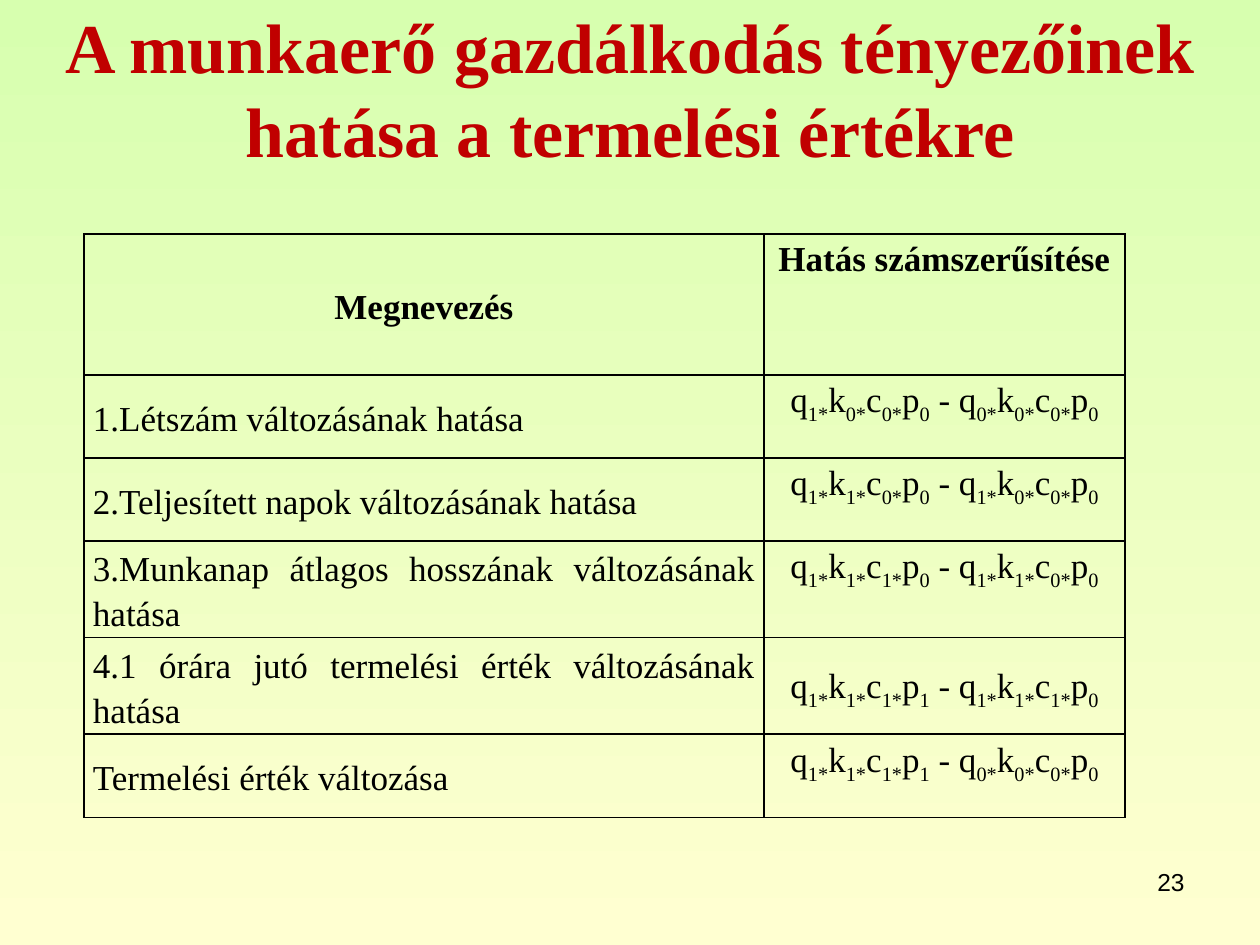
import dataclasses

import pptx
import pptx.dml.color
import pptx.enum.text
import pptx.oxml
import pptx.oxml.ns
import pptx.util

PX = 914400 / 126
SERIF, SANS = "Times New Roman", "Arial"
BLACK, RED = "000000", "C00000"
ALIGN = pptx.enum.text.PP_ALIGN
ANCHOR = pptx.enum.text.MSO_ANCHOR
COLUMN_WIDTHS = (680, 361)
HEADER_HEIGHT, ROW_HEIGHT = 141, 83
CELL_MARGIN = 9


@dataclasses.dataclass(frozen=True)
class Effect:
    """A factor with the 0/1 period indices of q, k, c, p in both products."""
    name: str
    minuend: str
    subtrahend: str
    formula_anchor: ANCHOR = ANCHOR.TOP
    bottom_line: float = 1


EFFECTS = (
    Effect("1.Létszám változásának hatása", "1000", "0000"),
    Effect("2.Teljesített napok változásának hatása", "1100", "1000"),
    Effect("3.Munkanap átlagos hosszának változásának hatása", "1110", "1100"),
    Effect("4.1 órára jutó termelési érték változásának hatása", "1111", "1110",
           ANCHOR.MIDDLE, 1.5),
    Effect("Termelési érték változása", "1111", "0000"),
)


def px(n: int) -> pptx.util.Emu:
    return pptx.util.Emu(round(n * PX))


def rgb(value: str) -> pptx.dml.color.RGBColor:
    return pptx.dml.color.RGBColor.from_string(value)


def add_run(p, text: str, *, size: int = 20, font: str = SERIF, color: str = BLACK,
            bold: bool = False, subscript: bool = False) -> None:
    r = p.add_run()
    r.text = text
    r.font.size = pptx.util.Pt(size)
    r.font.name = font
    r.font.bold = bold
    r.font.color.rgb = rgb(color)
    if subscript:
        r._r.get_or_add_rPr().set("baseline", "-25000")


def add_text(s, text: str, box: tuple[int, int, int, int], *, align: ALIGN,
             anchor: ANCHOR = ANCHOR.TOP, **style) -> None:
    tf = s.shapes.add_textbox(*map(px, box)).text_frame
    tf.word_wrap = True
    tf.vertical_anchor = anchor
    tf.paragraphs[0].alignment = align
    add_run(tf.paragraphs[0], text, **style)


def add_product(p, indices: str, prefix: str = "") -> None:
    """Write q·k·c·p with subscript indices and an asterisk after all but the last."""
    for factor, index in zip("qkcp", indices):
        add_run(p, prefix + factor)
        add_run(p, index if factor == "p" else index + "*", subscript=True)
        prefix = ""


def set_borders(cell, top: float, bottom: float) -> None:
    tc_pr = cell._tc.get_or_add_tcPr()
    for side, width in (("L", 1), ("R", 1), ("T", top), ("B", bottom)):
        tc_pr.append(pptx.oxml.parse_xml(
            f'<a:ln{side} {pptx.oxml.ns.nsdecls("a")} w="{pptx.util.Pt(width)}">'
            f'<a:solidFill><a:srgbClr val="{BLACK}"/></a:solidFill></a:ln{side}>'))


def format_cell(cell, align: ALIGN, anchor: ANCHOR, top: float = 1, bottom: float = 1):
    """Style the cell and return its paragraph."""
    set_borders(cell, top, bottom)
    cell.fill.background()
    cell.margin_left = cell.margin_right = px(CELL_MARGIN)
    cell.margin_top = cell.margin_bottom = 0
    cell.vertical_anchor = anchor
    p = cell.text_frame.paragraphs[0]
    p.alignment = align
    p.line_spacing = 1.15
    return p


def add_effects_table(s) -> None:
    height = HEADER_HEIGHT + ROW_HEIGHT * len(EFFECTS)
    table = s.shapes.add_table(len(EFFECTS) + 1, len(COLUMN_WIDTHS), px(84), px(234),
                               px(sum(COLUMN_WIDTHS)), px(height)).table
    table.first_row = table.horz_banding = False
    for column, width in zip(table.columns, COLUMN_WIDTHS):
        column.width = px(width)
    for i, row in enumerate(table.rows):
        row.height = px(ROW_HEIGHT if i else HEADER_HEIGHT)

    headers = (("Megnevezés", ANCHOR.MIDDLE), ("Hatás számszerűsítése", ANCHOR.TOP))
    for j, (text, anchor) in enumerate(headers):
        add_run(format_cell(table.cell(0, j), ALIGN.CENTER, anchor), text, bold=True)

    top = 1
    for i, effect in enumerate(EFFECTS, start=1):
        lines = {"top": top, "bottom": effect.bottom_line}
        p = format_cell(table.cell(i, 0), ALIGN.JUSTIFY, ANCHOR.MIDDLE, **lines)
        add_run(p, effect.name)
        p = format_cell(table.cell(i, 1), ALIGN.CENTER, effect.formula_anchor, **lines)
        add_product(p, effect.minuend)
        add_product(p, effect.subtrahend, prefix=" - ")
        top = effect.bottom_line


def set_background(s) -> None:
    fill = s.background.fill
    fill.gradient()
    fill.gradient_angle = 270
    for stop, color in zip(fill.gradient_stops, ("D7FFAF", "FFFFD1")):
        stop.color.rgb = rgb(color)


def main() -> None:
    prs = pptx.Presentation()
    prs.slide_width, prs.slide_height = px(1260), px(945)
    s = prs.slides.add_slide(prs.slide_layouts[6])
    set_background(s)
    add_text(s, "A munkaerő gazdálkodás tényezőinek hatása a termelési értékre",
             (0, 0, 1260, 175), align=ALIGN.CENTER, anchor=ANCHOR.MIDDLE,
             size=40, color=RED, bold=True)
    add_text(s, "23", (903, 861, 294, 66), align=ALIGN.RIGHT, size=14, font=SANS)
    add_effects_table(s)
    prs.save("out.pptx")


if __name__ == "__main__":
    main()
